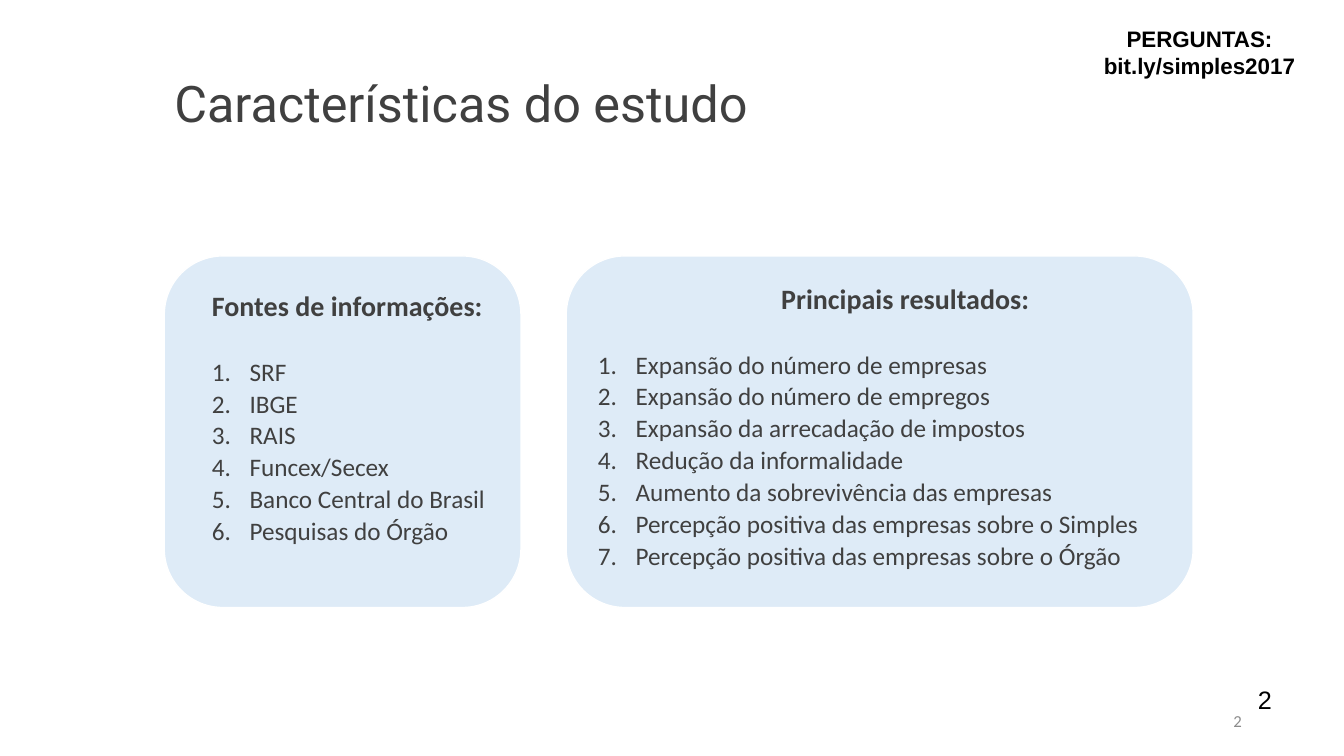
from lxml import etree
from pptx import Presentation
from pptx.dml.color import RGBColor
from pptx.enum.shapes import MSO_SHAPE
from pptx.enum.text import MSO_ANCHOR, MSO_AUTO_SIZE, PP_ALIGN
from pptx.oxml.ns import qn
from pptx.util import Cm, Pt

LEFT, CENTER, RIGHT = PP_ALIGN.LEFT, PP_ALIGN.CENTER, PP_ALIGN.RIGHT
TOP, MIDDLE = MSO_ANCHOR.TOP, MSO_ANCHOR.MIDDLE
ROUNDED, RECTANGLE = MSO_SHAPE.ROUNDED_RECTANGLE, MSO_SHAPE.RECTANGLE
NO_AUTOFIT = MSO_AUTO_SIZE.NONE
TITLE_ONLY = 5
COLORS = {"panel": "DEEBF7", "white": "FFFFFF", "text": "404040",
          "black": "000000", "gray": "8C8C8C"}
CARD_TOP, CARD_HEIGHT = 6.45, 8.86
LIST_WIDTH = 16.94
SOURCES = ["SRF", "IBGE", "RAIS", "Funcex/Secex", "Banco Central do Brasil",
           "Pesquisas do Órgão"]
RESULTS = ["Expansão do número de empresas", "Expansão do número de empregos",
           "Expansão da arrecadação de impostos", "Redução da informalidade",
           "Aumento da sobrevivência das empresas",
           "Percepção positiva das empresas sobre o Simples",
           "Percepção positiva das empresas sobre o Órgão"]


def write(paragraph, text, size=18, font="Calibri", color="text", bold=False,
          align=LEFT, indent=0, hanging=0, before=0, spacing=1.0, numbered=False):
    """Fill a paragraph with formatted text; indents are in centimetres."""
    properties = paragraph._p.get_or_add_pPr()
    properties.set("marL", str(Cm(indent)))
    properties.set("indent", str(-Cm(hanging)))
    if numbered:
        etree.SubElement(properties, qn("a:buAutoNum"), type="arabicPeriod")
    paragraph.alignment = align
    paragraph.line_spacing = spacing
    paragraph.space_before = Pt(before)
    run = paragraph.add_run()
    run.text = text
    run.font.name, run.font.size, run.font.bold = font, Pt(size), bold
    run.font.color.rgb = RGBColor.from_string(COLORS[color])


class StudySlide:
    """Hold the current slide and draw its elements in one style."""

    def __init__(self, presentation):
        self.slide = presentation.slides.add_slide(presentation.slide_layouts[TITLE_ONLY])

    def prepare(self, frame, anchor=TOP):
        """Set wrapping and anchoring, and return the first paragraph."""
        frame.word_wrap = True
        frame.auto_size = NO_AUTOFIT
        frame.vertical_anchor = anchor
        return frame.paragraphs[0]

    def title(self, text, left, top, width, height):
        """Place and format the title placeholder."""
        title = self.slide.shapes.title
        title.left, title.top, title.width, title.height = map(Cm, (left, top, width, height))
        write(self.prepare(title.text_frame), text, size=36, font="Roboto")

    def block(self, kind, fill, left, top, width, height):
        """Draw a filled shape with a thin white outline."""
        block = self.slide.shapes.add_shape(kind, *map(Cm, (left, top, width, height)))
        block.shadow.inherit = False
        block.fill.solid()
        block.fill.fore_color.rgb = RGBColor.from_string(COLORS[fill])
        block.line.color.rgb = RGBColor.from_string(COLORS["white"])
        block.line.width = Pt(1)
        return block

    def label(self, text, left, top, width, height, anchor=TOP, **style):
        """Add a text box and return its frame."""
        box = self.slide.shapes.add_textbox(*map(Cm, (left, top, width, height)))
        write(self.prepare(box.text_frame, anchor), text, **style)
        return box.text_frame

    def numbered_list(self, heading, items, left, top, height, align=LEFT):
        """Add a bold heading followed by a numbered list."""
        frame = self.label(heading, left, top, LIST_WIDTH, height, size=20, bold=True,
                           align=align, indent=0.95, spacing=0.9)
        for position, item in enumerate(items):
            write(frame.add_paragraph(), item, indent=1.9, hanging=0.95, spacing=0.9,
                  before=3.3 if position else 26.4, numbered=True)

    def question_tag(self, lines, left, top, width, height):
        """Add the white corner tag with centred bold lines."""
        tag = self.block(RECTANGLE, "white", left, top, width, height)
        paragraph = self.prepare(tag.text_frame)
        for position, line in enumerate(lines):
            if position:
                paragraph = tag.text_frame.add_paragraph()
            write(paragraph, line, size=16, font="Arial", color="black",
                  bold=True, align=CENTER)


def main():
    """Build and save the slide."""
    presentation = Presentation()
    presentation.slide_width, presentation.slide_height = Cm(33.87), Cm(19.05)
    study = StudySlide(presentation)
    study.label("2", 31.45, 17.12, 2.41, 1.02, font="Arial", color="black")
    for left, width in ((14.27, 15.8), (4.14, 8.99)):
        study.block(ROUNDED, "panel", left, CARD_TOP, width, CARD_HEIGHT)
    study.title("Características do estudo", 4.14, 1.68, 15.19, 3.33)
    study.numbered_list("Fontes de informações:", SOURCES, 4.14, 7.24, 7.52)
    study.numbered_list("Principais resultados:", RESULTS, 13.87, 7.06, 7.8, align=CENTER)
    study.question_tag(["PERGUNTAS:", "bit.ly/simples2017"], 27.13, 0.51, 6.2, 1.63)
    study.label("2", 23.93, 17.65, 7.62, 1.02, anchor=MIDDLE, size=12,
                color="gray", align=RIGHT)
    presentation.save("out.pptx")


if __name__ == "__main__":
    main()
